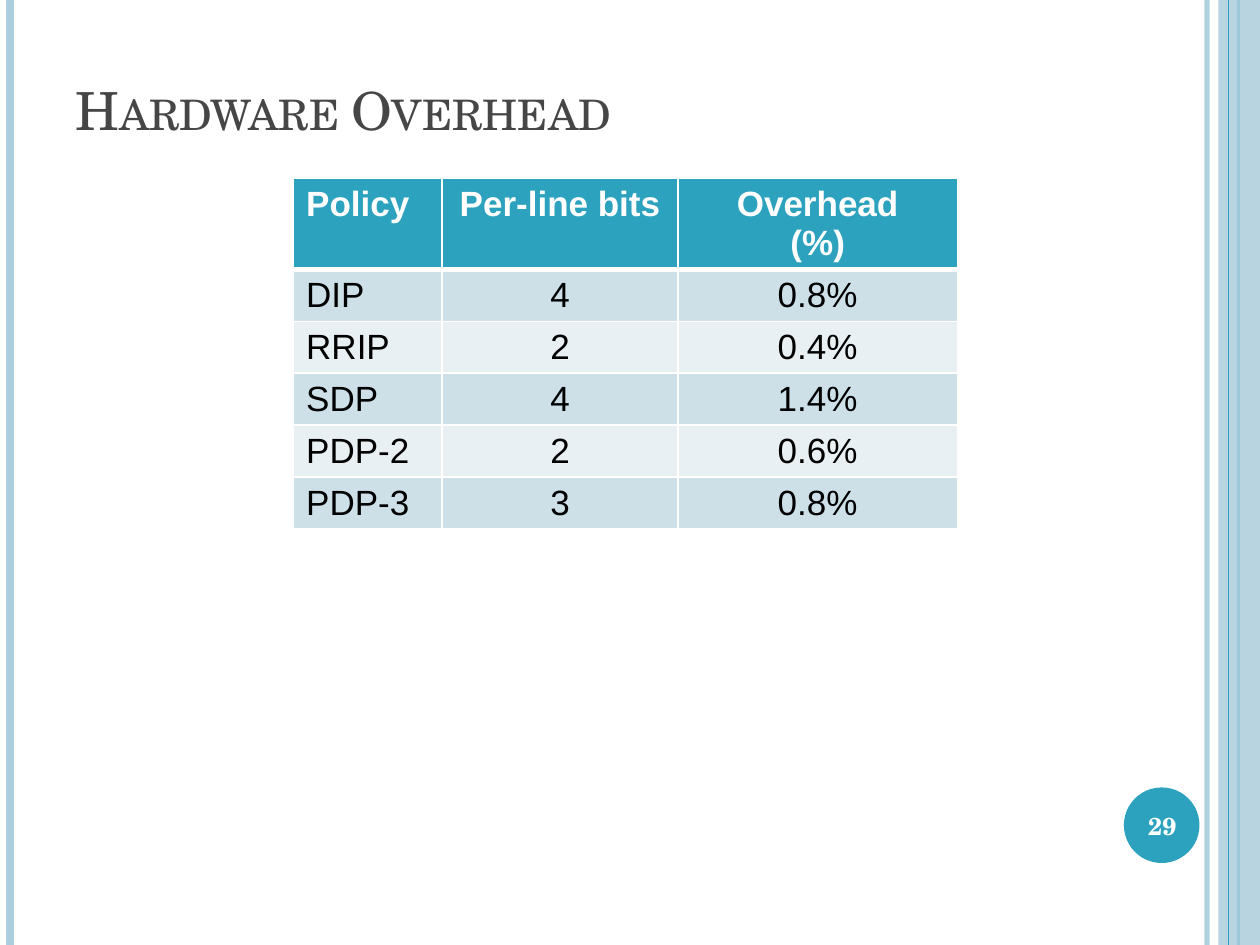
from dataclasses import dataclass
from lxml.etree import SubElement
from pptx import Presentation
from pptx.dml.color import RGBColor as RGB
from pptx.enum.shapes import MSO_CONNECTOR as CONN, MSO_SHAPE as SHAPE
from pptx.enum.text import MSO_ANCHOR as ANCHOR, PP_ALIGN as ALIGN
from pptx.oxml.ns import qn
from pptx.util import Inches, Pt


@dataclass(frozen=True)
class Theme:
    accent: str = "2DA2BF"
    pale: str = "ADCEDC"
    title: str = "464646"
    white: str = "FFFFFF"
    black: str = "000000"
    bands: tuple = ("E8F0F4", "CDE0E8")
    serif: str = "TeX Gyre Schola"
    sans: str = "Arial"
    title_size: int = 30
    table_size: int = 20
    number_size: int = 14


def style(p, font, size, color, bold=False, align=ALIGN.LEFT):
    p.alignment = align
    for r in p.runs:
        r.font.name, r.font.size, r.font.bold = font, Pt(size), bold
        r.font.color.rgb = RGB.from_string(color)


def set_alpha(fill_xml, percent):
    color = next(fill_xml.iter(qn("a:srgbClr")))
    SubElement(color, qn("a:alpha")).set("val", str(percent * 1000))


T = Theme()
prs = Presentation()
prs.slide_width, prs.slide_height = Inches(10), Inches(7.5)
W, H = prs.slide_width, prs.slide_height
s = prs.slides.add_slide(prs.slide_layouts[5])

rules = [
    (0.958, T.pale, 3, 93),
    (0.008, T.pale, 4.5, 100),
    (0.983, T.accent, 1.5, 100),
    (0.975, T.accent, 0.75, 100),
]
panel = (SHAPE.RECTANGLE, 0.967, 0, 0.033, 1, T.pale, 87)
badge = (SHAPE.OVAL, 0.892, 0.8333, 0.06, 0.08, T.accent, 100)

for item in rules[:3] + [panel] + rules[3:] + [badge]:
    if len(item) == 4:
        x, color, width, alpha = item
        sp = s.shapes.add_connector(CONN.STRAIGHT, int(x * W), 0, int(x * W), H)
        sp.line.color.rgb = RGB.from_string(color)
        sp.line.width = Pt(width)
        SubElement(sp._element.spPr, qn("a:effectLst"))
    else:
        kind, x, y, w, h, color, alpha = item
        sp = s.shapes.add_shape(kind, int(x * W), int(y * H), int(w * W), int(h * H))
        sp.shadow.inherit = False
        sp.fill.solid()
        sp.fill.fore_color.rgb = RGB.from_string(color)
        sp.line.fill.background()
    if alpha < 100:
        set_alpha(sp._element.spPr, alpha)

title = s.shapes.title
title.left, title.top = int(0.05 * W), int(0.04 * H)
title.width, title.height = int(0.817 * W), int(0.116 * H)
tf = title.text_frame
tf.text = "Hardware Overhead"
tf.vertical_anchor = ANCHOR.BOTTOM
p = tf.paragraphs[0]
style(p, T.serif, T.title_size, T.title)
p.runs[0].font._element.set("cap", "small")

rows = [
    ("Policy", "Per-line bits", "Overhead\n(%)"),
    ("DIP", "4", "0.8%"),
    ("RRIP", "2", "0.4%"),
    ("SDP", "4", "1.4%"),
    ("PDP-2", "2", "0.6%"),
    ("PDP-3", "3", "0.8%"),
]
columns = [0.118, 0.187, 0.222]
row_height = int(0.055 * H)
table = s.shapes.add_table(
    len(rows), len(columns), int(0.233 * W), int(0.189 * H),
    int(sum(columns) * W), len(rows) * row_height,
).table
for column, share in zip(table.columns, columns):
    column.width = int(share * W)
for i, values in enumerate(rows):
    table.rows[i].height = row_height
    header = i == 0
    for j, value in enumerate(values):
        cell = table.cell(i, j)
        cell.text_frame.text = value
        for p in cell.text_frame.paragraphs:
            style(p, T.sans, T.table_size, T.white if header else T.black,
                  header, ALIGN.CENTER if j else ALIGN.LEFT)
        tcPr = cell._tc.get_or_add_tcPr()
        for side in "LRTB":
            thick = (header and side == "B") or (i == 1 and side == "T")
            ln = SubElement(tcPr, qn(f"a:ln{side}"), w=str(Pt(3 if thick else 1)))
            fill = SubElement(ln, qn("a:solidFill"))
            SubElement(fill, qn("a:srgbClr"), val=T.white)
        cell.fill.solid()
        cell.fill.fore_color.rgb = RGB.from_string(T.accent if header else T.bands[i % 2])

number = s.shapes.add_textbox(int(0.889 * W), int(0.836 * H), int(0.067 * W), int(0.076 * H))
tf = number.text_frame
tf.word_wrap = True
tf.vertical_anchor = ANCHOR.MIDDLE
tf.text = "29"
style(tf.paragraphs[0], T.serif, T.number_size, T.white, True, ALIGN.CENTER)

prs.save("out.pptx")
